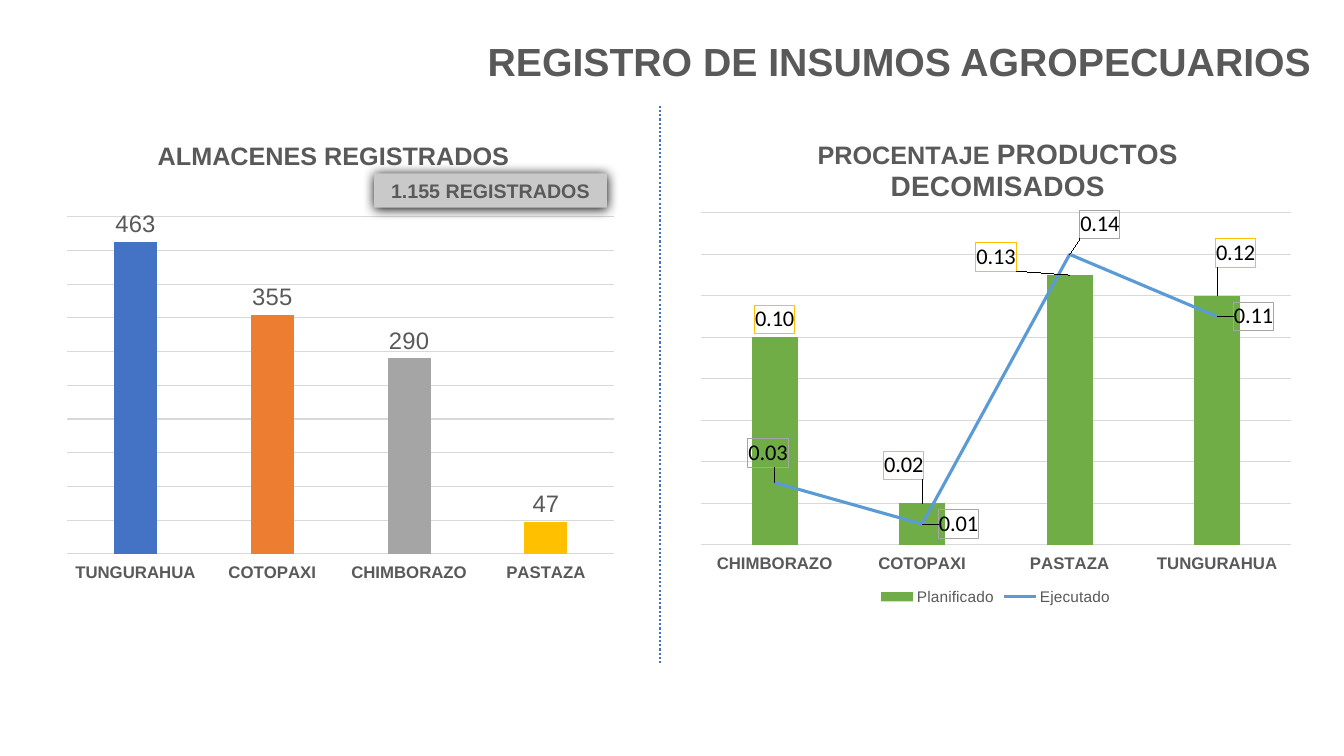
from lxml import etree
from pptx import Presentation
from pptx.chart.data import CategoryChartData
from pptx.dml.color import RGBColor
from pptx.enum.chart import XL_CHART_TYPE, XL_LABEL_POSITION as LabelPos, XL_LEGEND_POSITION
from pptx.enum.chart import XL_MARKER_STYLE, XL_TICK_LABEL_POSITION, XL_TICK_MARK
from pptx.enum.dml import MSO_LINE
from pptx.enum.shapes import MSO_CONNECTOR, MSO_SHAPE
from pptx.enum.text import MSO_ANCHOR, PP_ALIGN
from pptx.oxml import parse_xml
from pptx.oxml.ns import nsdecls, qn
from pptx.util import Inches, Pt

BLACK = RGBColor(0x00, 0x00, 0x00)
GRAY = RGBColor(0x59, 0x59, 0x59)
GRID = RGBColor(0xD9, 0xD9, 0xD9)
BADGE = RGBColor(0xC9, 0xC9, 0xC9)
BLUE = RGBColor(0x44, 0x72, 0xC4)
ORANGE = RGBColor(0xED, 0x7D, 0x31)
SILVER = RGBColor(0xA5, 0xA5, 0xA5)
GOLD = RGBColor(0xFF, 0xC0, 0x00)
GREEN = RGBColor(0x70, 0xAD, 0x47)
SKY = RGBColor(0x5B, 0x9B, 0xD5)

TITLE = "REGISTRO DE INSUMOS AGROPECUARIOS"
BADGE_TEXT = "1.155 REGISTRADOS"
STORES = {
    "title": [[("ALMACENES REGISTRADOS", 18)]],
    "title_at": (0.195, 0.04),
    "box": (0.41, 1.14, 5.69, 4.91),
    "plot": (0.045, 0.206, 0.954, 0.681),
    "axis": (500, 50),
    "format": "General",
    "cats": ["TUNGURAHUA", "COTOPAXI", "CHIMBORAZO", "PASTAZA"],
    "series": {"Series 1": [463, 355, 290, 47]},
}
SEIZED = {
    "title": [[("PROCENTAJE ", 18), ("PRODUCTOS", 20)], [("DECOMISADOS", 20)]],
    "title_at": (0.205, 0.04),
    "box": (6.83, 1.14, 6.09, 4.91),
    "plot": (0.02, 0.198, 0.961, 0.671),
    "axis": (0.16, 0.02),
    "format": "0.00",
    "cats": ["CHIMBORAZO", "COTOPAXI", "PASTAZA", "TUNGURAHUA"],
    "series": {"Planificado": [0.10, 0.02, 0.13, 0.12],
               "Ejecutado": [0.03, 0.01, 0.14, 0.11]},
}
STORE_COLORS = [BLUE, ORANGE, SILVER, GOLD]
PLANNED_SHIFTS = [(0, 0), (-0.03, -0.04), (-0.12, 0), (0.03, -0.05)]
DONE_SHIFTS = [(-0.05, -0.06), (0.02, 0), (0.01, -0.06), (0.02, 0)]


def style(font, size, color=GRAY, bold=False, name="Arial"):
    font.size, font.bold, font.name = Pt(size), bold, name
    font.color.rgb = color


def write(p, text, size, align=None, **fmt):
    r = p.add_run()
    r.text = text
    style(r.font, size, bold=True, **fmt)
    if align is not None:
        p.alignment = align


def place(parent, index, x, y, w=None, h=None, edge=True):
    for old in parent.findall(qn("c:layout")):
        parent.remove(old)
    tags = [("layoutTarget", "inner")] if w else []
    tags += [("xMode", "edge"), ("yMode", "edge")] if edge else []
    tags += [("x", x), ("y", y)] + ([("w", w), ("h", h)] if w else [])
    body = "".join(f'<c:{tag} val="{val}"/>' for tag, val in tags)
    parent.insert(index, parse_xml(
        f'<c:layout {nsdecls("c")}><c:manualLayout>{body}</c:manualLayout></c:layout>'))


def add_column_chart(s, data):
    cd = CategoryChartData(number_format=data["format"])
    cd.categories = data["cats"]
    for name, vals in data["series"].items():
        cd.add_series(name, vals)
    chart = s.shapes.add_chart(XL_CHART_TYPE.COLUMN_CLUSTERED,
                               *map(Inches, data["box"]), cd).chart
    style(chart.font, 10, BLACK, name="Calibri")
    tf = chart.chart_title.text_frame
    for i, line in enumerate(data["title"]):
        p = tf.add_paragraph() if i else tf.paragraphs[0]
        for text, size in line:
            write(p, text, size)
    chart.chart_title.include_in_layout = False
    place(chart._chartSpace.find(".//" + qn("c:title")), 1, *data["title_at"])
    place(chart._chartSpace.find(".//" + qn("c:plotArea")), 0, *data["plot"])

    cat, val = chart.category_axis, chart.value_axis
    cat.major_tick_mark = XL_TICK_MARK.NONE
    cat.tick_label_position = XL_TICK_LABEL_POSITION.LOW
    style(cat.tick_labels.font, 12, bold=True)
    val.minimum_scale = 0
    val.maximum_scale, val.major_unit = data["axis"]
    val.has_major_gridlines = True
    for line in (cat.format.line, val.major_gridlines.format.line):
        line.color.rgb, line.width = GRID, Pt(0.75)
    val.visible = False
    plot = chart.plots[0]
    plot.gap_width, plot.overlap, plot.vary_by_categories = 219, -27, False
    return chart


def move_to_line(chart):
    bar = chart._chartSpace.find(".//" + qn("c:barChart"))
    ser = bar.findall(qn("c:ser"))[1]
    for invert in ser.findall(qn("c:invertIfNegative")):
        ser.remove(invert)
    line = parse_xml(f'<c:lineChart {nsdecls("c")}><c:grouping val="standard"/>'
                     '<c:varyColors val="0"/><c:marker val="1"/></c:lineChart>')
    line.insert(2, ser)
    for ax in bar.findall(qn("c:axId")):
        etree.SubElement(line, qn("c:axId")).set("val", ax.get("val"))
    bar.addnext(line)
    return chart.plots[1].series[0]


def label_points(series, pos, border, shifts):
    labels = series.data_labels
    labels.show_value, labels.position = True, pos
    labels.number_format, labels.number_format_is_linked = "0.00", False
    style(labels.font, 16, BLACK, name="Calibri")
    for i in range(len(shifts)):
        label = series.points[i].data_label
        label.position = pos
        style(label.font, 16, BLACK, name="Calibri")
    for node, shift in zip(series._element.iter(qn("c:dLbl")), shifts):
        place(node, 1, *shift, edge=False)
        for old in node.findall(qn("c:spPr")):
            node.remove(old)
        node.insert(2, parse_xml(
            f'<c:numFmt {nsdecls("c")} formatCode="0.00" sourceLinked="0"/>'))
        node.insert(3, parse_xml(
            f'<c:spPr {nsdecls("c", "a")}><a:noFill/><a:ln w="9525"><a:solidFill>'
            f'<a:srgbClr val="{border}"/></a:solidFill></a:ln></c:spPr>'))


def add_stores(s):
    chart = add_column_chart(s, STORES)
    chart.has_legend = False
    bars = chart.plots[0].series[0]
    for i, color in enumerate(STORE_COLORS):
        fill = bars.points[i].format.fill
        fill.solid()
        fill.fore_color.rgb = color
    labels = bars.data_labels
    labels.show_value, labels.position = True, LabelPos.OUTSIDE_END
    style(labels.font, 17)


def add_seized(s):
    chart = add_column_chart(s, SEIZED)
    done = move_to_line(chart)
    planned = chart.plots[0].series[0]
    planned.format.fill.solid()
    planned.format.fill.fore_color.rgb = GREEN
    done.format.line.color.rgb, done.format.line.width = SKY, Pt(2.25)
    done.marker.style, done.smooth = XL_MARKER_STYLE.NONE, False
    label_points(planned, LabelPos.OUTSIDE_END, GOLD, PLANNED_SHIFTS)
    label_points(done, LabelPos.RIGHT, SILVER, DONE_SHIFTS)
    chart.has_legend = True
    chart.legend.position = XL_LEGEND_POSITION.BOTTOM
    chart.legend.include_in_layout = False
    style(chart.legend.font, 11)


def main():
    """Build the farm supplies registration slide with its two charts."""
    prs = Presentation()
    prs.slide_width, prs.slide_height = Inches(13.33), Inches(7.5)
    s = prs.slides.add_slide(prs.slide_layouts[5])
    add_stores(s)
    add_seized(s)

    title = s.shapes.title
    title.left, title.top, title.width, title.height = map(Inches, (4.11, 0.32, 8.99, 0.57))
    title.text_frame.vertical_anchor = MSO_ANCHOR.MIDDLE
    write(title.text_frame.paragraphs[0], TITLE, 28, PP_ALIGN.RIGHT)

    divider = s.shapes.add_connector(MSO_CONNECTOR.STRAIGHT, *map(Inches, (6.55, 1.05, 6.55, 6.58)))
    divider.line.color.rgb, divider.line.width = BLUE, Pt(1.5)
    divider.line.dash_style = MSO_LINE.ROUND_DOT
    etree.SubElement(divider._element.spPr, qn("a:effectLst"))

    badge = s.shapes.add_shape(MSO_SHAPE.RECTANGLE, *map(Inches, (3.71, 1.72, 2.31, 0.34)))
    badge.fill.solid()
    badge.fill.fore_color.rgb = BADGE
    badge.line.fill.background()
    badge.shadow.inherit = False
    badge._element.spPr.find(qn("a:effectLst")).append(parse_xml(
        f'<a:outerShdw {nsdecls("a")} blurRad="{Pt(8.5)}" dist="{Pt(1)}" dir="5400000">'
        f'<a:srgbClr val="{BLACK}"/></a:outerShdw>'))
    write(badge.text_frame.paragraphs[0], BADGE_TEXT, 14, PP_ALIGN.CENTER)
    prs.save("out.pptx")


if __name__ == "__main__":
    main()
